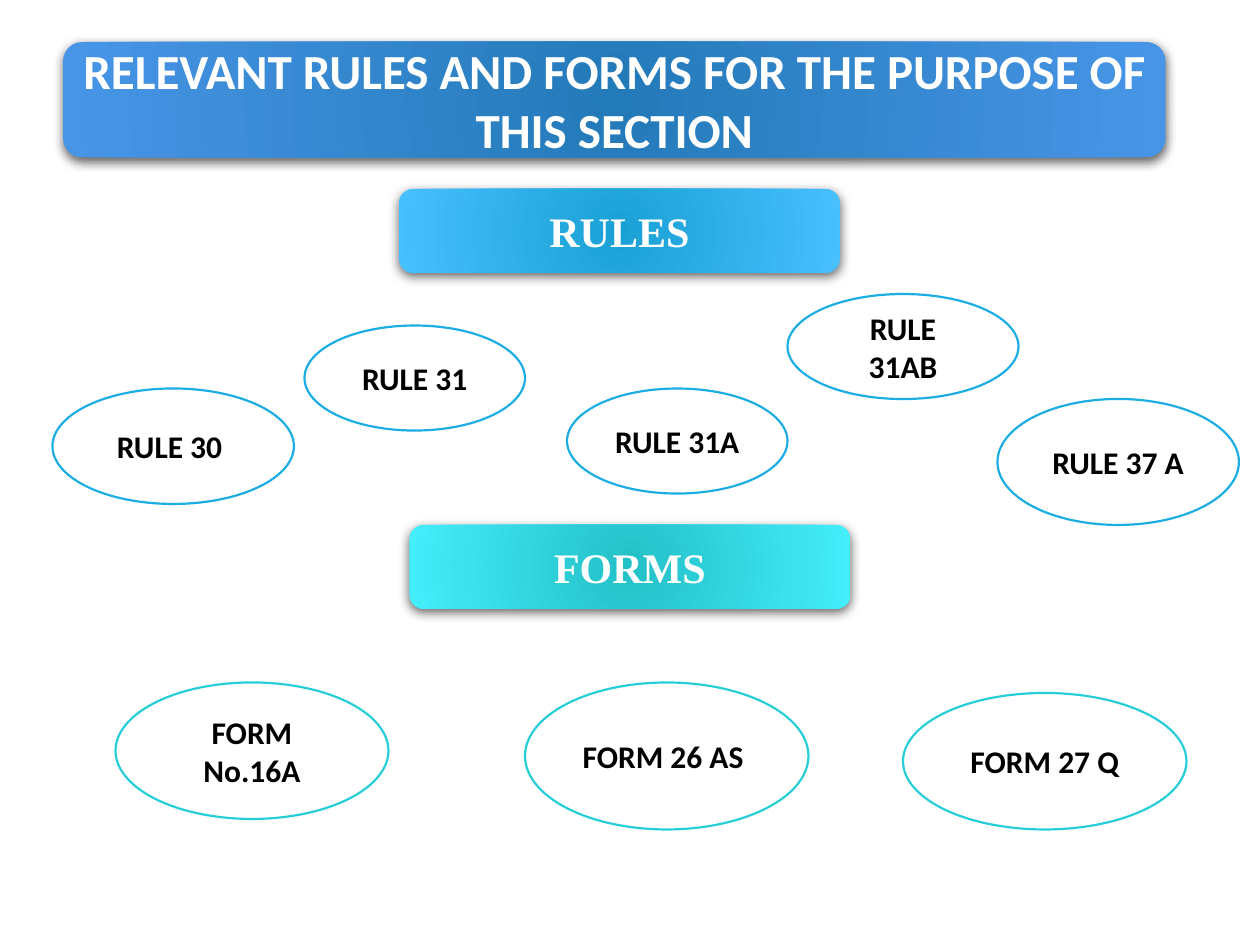
from lxml.etree import SubElement
from pptx import Presentation
from pptx.dml.color import RGBColor
from pptx.enum.shapes import MSO_SHAPE
from pptx.enum.text import MSO_ANCHOR, PP_ALIGN
from pptx.oxml.ns import qn
from pptx.util import Pt

COLORS = {
    "white": "FFFFFF",
    "black": "000000",
    "title_inner": "237AB8",
    "title_outer": "4895E7",
    "rules_inner": "1AA1D4",
    "rules_outer": "48BFFF",
    "rules_line": "1CADE4",
    "forms_inner": "24C0C8",
    "forms_outer": "44EEFA",
    "forms_line": "27CED7",
}

RULES = [
    ("RULE 30 ", (30, 222, 138, 66)),
    ("RULE 31", (174, 186, 126, 60)),
    ("RULE 31A", (324, 222, 126, 60)),
    ("RULE 31AB", (450, 168, 132, 60)),
    ("RULE 37 A", (570, 228, 138, 72)),
]
FORMS = [
    ("FORM No.16A", (66, 390, 156, 78)),
    ("FORM 26 AS ", (300, 390, 162, 84)),
    ("FORM 27 Q", (516, 396, 162, 78)),
]


def color(name):
    return RGBColor.from_string(COLORS[name])


def write_text(shape, text, *, size, fill, font="Calibri", bold=True):
    frame = shape.text_frame
    frame.word_wrap = True
    frame.vertical_anchor = MSO_ANCHOR.MIDDLE
    paragraph = frame.paragraphs[0]
    paragraph.alignment = PP_ALIGN.CENTER
    run = paragraph.add_run()
    run.text = text
    run.font.name = font
    run.font.size = Pt(size)
    run.font.bold = bold
    run.font.color.rgb = color(fill)


class SlideBuilder:
    oval_size = 18
    line_width = 1.25

    def __init__(self, slide):
        self.slide = slide

    def add_shape(self, kind, box):
        shape = self.slide.shapes.add_shape(kind, *map(Pt, box))
        shape.shadow.inherit = False
        return shape

    def banner(self, text, box, theme, size, font):
        shape = self.add_shape(MSO_SHAPE.ROUNDED_RECTANGLE, box)
        shape.line.fill.background()
        self.radial_fill(shape, theme)
        self.drop_shadow(shape)
        write_text(shape, text, size=size, fill="white", font=font)

    def oval(self, text, box, theme):
        shape = self.add_shape(MSO_SHAPE.OVAL, box)
        shape.fill.solid()
        shape.fill.fore_color.rgb = color("white")
        shape.line.color.rgb = color(f"{theme}_line")
        shape.line.width = Pt(self.line_width)
        write_text(shape, text, size=self.oval_size, fill="black")

    def radial_fill(self, shape, theme):
        shape.fill.gradient()
        for stop, part in zip(shape.fill.gradient_stops, ("inner", "outer")):
            stop.color.rgb = color(f"{theme}_{part}")
        gradient = shape._element.spPr.find(qn("a:gradFill"))
        gradient.remove(gradient.find(qn("a:lin")))
        circle = SubElement(gradient, qn("a:path"), path="circle")
        SubElement(circle, qn("a:fillToRect"), dict.fromkeys("ltrb", "100000"))

    def drop_shadow(self, shape):
        effects = shape._element.spPr.find(qn("a:effectLst"))
        shadow = SubElement(
            effects, qn("a:outerShdw"), blurRad=str(Pt(6)), dist=str(Pt(2)),
            dir="5400000", algn="ctr", rotWithShape="0",
        )
        tone = SubElement(shadow, qn("a:srgbClr"), val=COLORS["black"])
        SubElement(tone, qn("a:alpha"), val="60000")


def main():
    presentation = Presentation()
    presentation.slide_width = Pt(720)
    presentation.slide_height = Pt(540)
    slide = presentation.slides.add_slide(presentation.slide_layouts[6])
    builder = SlideBuilder(slide)

    builder.banner(
        "RELEVANT RULES AND FORMS FOR THE PURPOSE OF THIS SECTION",
        (36, 24, 630, 66), "title", 28, "Calibri",
    )
    builder.banner("RULES", (228, 108, 252, 48), "rules", 24, "Times New Roman")
    builder.banner("FORMS", (234, 300, 252, 48), "forms", 24, "Times New Roman")

    for theme, entries in (("rules", RULES), ("forms", FORMS)):
        for text, box in entries:
            builder.oval(text, box, theme)

    presentation.save("out.pptx")


if __name__ == "__main__":
    main()
